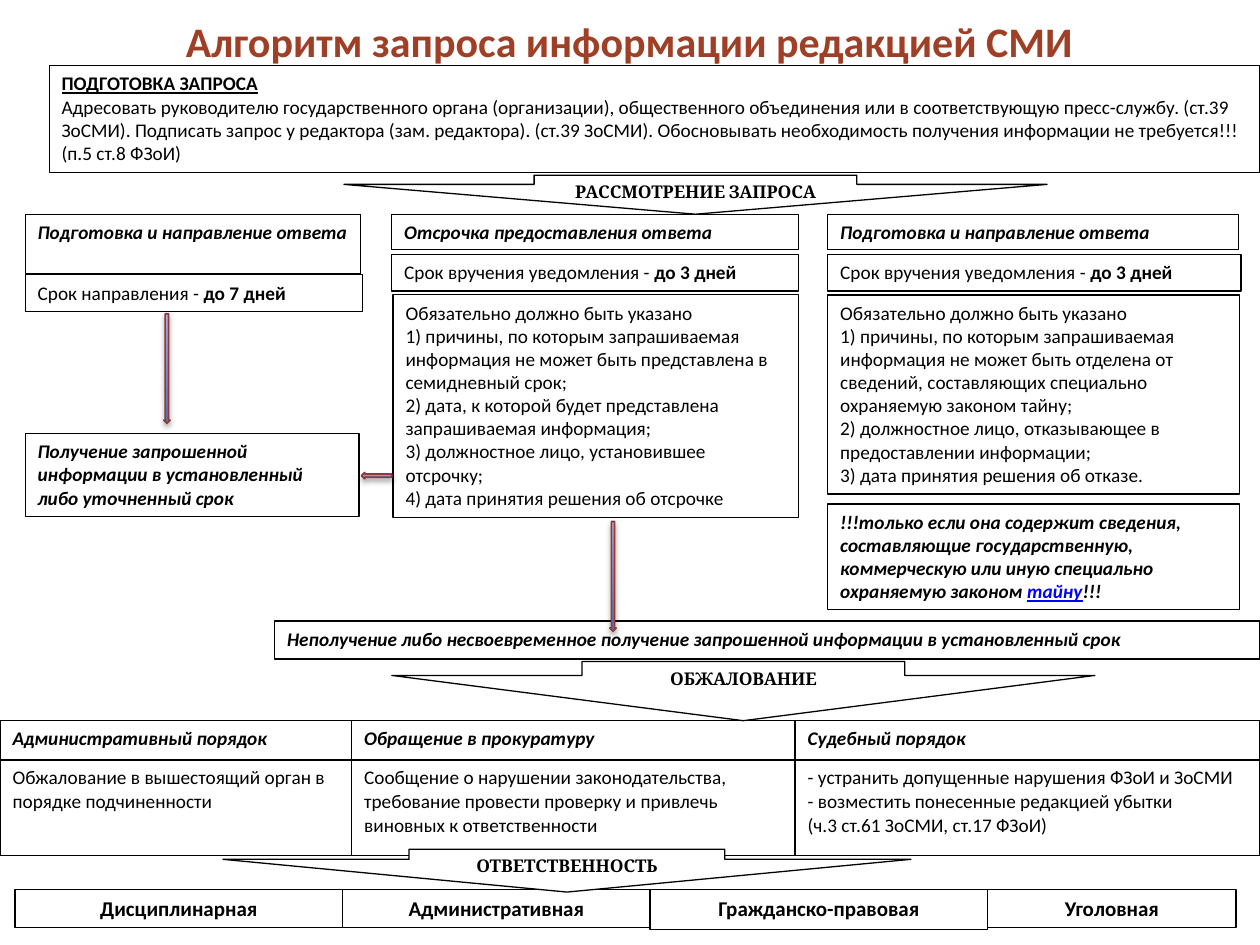
from pptx import Presentation
from pptx.dml.color import RGBColor
from pptx.enum.shapes import MSO_SHAPE
from pptx.enum.text import MSO_ANCHOR, PP_ALIGN
from pptx.oxml import parse_xml
from pptx.oxml.ns import nsdecls
from pptx.util import Inches, Pt


def rgb(value):
    return RGBColor.from_string(value)


def write(frame, paragraphs, size=11, font="Calibri", color="000000", bold=False,
          italic=False, underline=False, align=PP_ALIGN.LEFT, anchor=MSO_ANCHOR.TOP):
    frame.word_wrap = True
    frame.vertical_anchor = anchor
    for index, runs in enumerate(paragraphs):
        paragraph = frame.paragraphs[0] if index == 0 else frame.add_paragraph()
        paragraph.alignment = align
        for text, changes in [(runs, {})] if isinstance(runs, str) else runs:
            run = paragraph.add_run()
            run.text = text
            run.font.name = font
            run.font.size = Pt(size)
            run.font.bold = changes.get("bold", bold)
            run.font.italic = changes.get("italic", italic)
            run.font.underline = changes.get("underline", underline)
            run.font.color.rgb = rgb(changes.get("color", color))


prs = Presentation()
prs.slide_width, prs.slide_height = Inches(10), Inches(7.5)
slide = prs.slides.add_slide(prs.slide_layouts[6])
shapes = slide.shapes

title = shapes.add_textbox(Inches(0.27), Inches(0.13), Inches(9.45), Inches(0.39))
write(title.text_frame, ["Алгоритм запроса информации редакцией СМИ"], size=24, color="9F3F25",
      bold=True, align=PP_ALIGN.CENTER, anchor=MSO_ANCHOR.MIDDLE)

plain = {}
heading = {"bold": True, "italic": True}
liability = {"size": 12, "bold": True, "align": PP_ALIGN.CENTER}
left, middle, right = 0.2, 3.11, 6.57
notice = [[("Срок вручения уведомления - ", {}), ("до 3 дней", {"bold": True})]]

boxes = [
    (0.39, 0.52, 9.61, 0.85, plain, [
        [("ПОДГОТОВКА ЗАПРОСА", {"bold": True, "underline": True})],
        "Адресовать руководителю государственного органа (организации), общественного объединения "
        "или в соответствующую пресс-службу. (ст.39 ЗоСМИ). Подписать запрос у редактора "
        "(зам. редактора). (ст.39 ЗоСМИ). Обосновывать необходимость получения информации "
        "не требуется!!! (п.5 ст.8 ФЗоИ)"]),
    (left, 1.7, 2.66, 0.47, heading, ["Подготовка и направление ответа"]),
    (left, 2.18, 2.68, 0.29, plain,
     [[("Срок направления - ", {}), ("до 7 дней", {"bold": True})]]),
    (left, 3.44, 2.65, 0.66, heading,
     ["Получение запрошенной информации в установленный либо уточненный срок"]),
    (middle, 1.7, 3.23, 0.28, heading, ["Отсрочка предоставления ответа"]),
    (middle, 2.02, 3.23, 0.29, plain, notice),
    (3.12, 2.34, 3.22, 1.77, plain, [
        "Обязательно должно быть указано",
        "1) причины, по которым запрашиваемая информация не может быть представлена "
        "в семидневный срок;",
        "2) дата, к которой будет представлена запрашиваемая информация;",
        "3) должностное лицо, установившее отсрочку;",
        "4) дата принятия решения об отсрочке"]),
    (right, 1.7, 3.26, 0.28, heading, ["Подготовка и направление ответа"]),
    (right, 2.02, 3.28, 0.29, plain, notice),
    (right, 2.34, 3.27, 1.58, plain, [
        "Обязательно должно быть указано",
        "1) причины, по которым запрашиваемая информация не может быть отделена от сведений, "
        "составляющих специально охраняемую законом тайну;",
        "2) должностное лицо, отказывающее в предоставлении информации;",
        "3) дата принятия решения об отказе."]),
    (right, 4, 3.27, 0.84, heading, [[
        ("!!!только если она содержит сведения, составляющие государственную, коммерческую "
         "или иную специально охраняемую законом ", {}),
        ("тайну", {"color": "0000FF", "underline": True}),
        ("!!!", {})]]),
    (2.18, 4.93, 7.82, 0.3, heading,
     ["Неполучение либо несвоевременное получение запрошенной информации в установленный срок"]),
    (0.12, 7.06, 2.6, 0.3, liability, ["Дисциплинарная"]),
    (2.72, 7.06, 2.44, 0.3, liability, ["Административная"]),
    (5.16, 7.06, 2.68, 0.32, liability, ["Гражданско-правовая"]),
    (7.84, 7.06, 1.97, 0.3, liability, ["Уголовная"]),
]
for x, y, width, height, style, paragraphs in boxes:
    box = shapes.add_shape(MSO_SHAPE.RECTANGLE, Inches(x), Inches(y), Inches(width), Inches(height))
    box.shadow.inherit = False
    box.fill.background()
    box.line.color.rgb = rgb("000000")
    box.line.width = Pt(0.75)
    write(box.text_frame, paragraphs, **style)

appeal_rows = [
    [["Административный порядок"], ["Обращение в прокуратуру"], ["Судебный порядок"]],
    [["Обжалование в вышестоящий орган в порядке подчиненности"],
     ["Сообщение о нарушении законодательства, требование провести проверку и привлечь "
      "виновных к ответственности"],
     ["- устранить допущенные нарушения ФЗоИ и ЗоСМИ",
      "- возместить понесенные редакцией убытки",
      "(ч.3 ст.61 ЗоСМИ, ст.17 ФЗоИ)"]],
]
appeal = shapes.add_table(2, 3, Inches(0), Inches(5.72), Inches(10), Inches(1.07)).table
for column, width in zip(appeal.columns, (2.79, 3.52, 3.69)):
    column.width = Inches(width)
for row, height, contents, style in zip(appeal.rows, (0.31, 0.76), appeal_rows, (heading, plain)):
    row.height = Inches(height)
    for cell, paragraphs in zip(row.cells, contents):
        write(cell.text_frame, paragraphs, **style)
        properties = cell._tc.get_or_add_tcPr()
        for side in ("lnL", "lnR", "lnT", "lnB"):
            properties.append(parse_xml(
                f'<a:{side} {nsdecls("a")} w="12700"><a:solidFill><a:srgbClr val="000000"/>'
                f'</a:solidFill></a:{side}>'))
        cell.fill.background()

for x, y, width, height, stage in [
    (2.73, 1.39, 5.58, 0.31, "РАССМОТРЕНИЕ ЗАПРОСА"),
    (3.11, 5.25, 5.58, 0.47, "ОБЖАЛОВАНИЕ"),
    (1.77, 6.74, 5.46, 0.34, "ОТВЕТСТВЕННОСТЬ"),
]:
    banner = shapes.add_shape(MSO_SHAPE.DOWN_ARROW, Inches(x), Inches(y), Inches(width), Inches(height))
    banner.adjustments[0], banner.adjustments[1] = 0.459, 0.763
    banner.shadow.inherit = False
    banner.fill.solid()
    banner.fill.fore_color.rgb = rgb("FFFFFF")
    banner.line.color.rgb = rgb("000000")
    banner.line.width = Pt(0.75)
    write(banner.text_frame, [stage], size=10, font="Cambria", bold=True, align=PP_ALIGN.CENTER)

for direction, x, y, width, height in [
    (MSO_SHAPE.DOWN_ARROW, 4.84, 4.14, 0.05, 0.87),
    (MSO_SHAPE.DOWN_ARROW, 1.3, 2.49, 0.05, 0.87),
    (MSO_SHAPE.LEFT_ARROW, 2.87, 3.75, 0.24, 0.05),
]:
    step = shapes.add_shape(direction, Inches(x), Inches(y), Inches(width), Inches(height))
    step.fill.gradient()
    step.fill.gradient_angle = 90
    for stop, color in zip(step.fill.gradient_stops, ("3F80CE", "A4C4FF")):
        stop.color.rgb = rgb(color)
    step.line.color.rgb = rgb("953735")
    step.line.width = Pt(1)
    step.shadow.inherit = False
    step._element.spPr.find("{*}effectLst").append(parse_xml(
        f'<a:outerShdw {nsdecls("a")} blurRad="{Pt(3.1)}" dist="{Pt(1.8)}" dir="5400000" '
        'rotWithShape="0"><a:srgbClr val="000000"><a:alpha val="35000"/></a:srgbClr></a:outerShdw>'))

prs.save("out.pptx")
